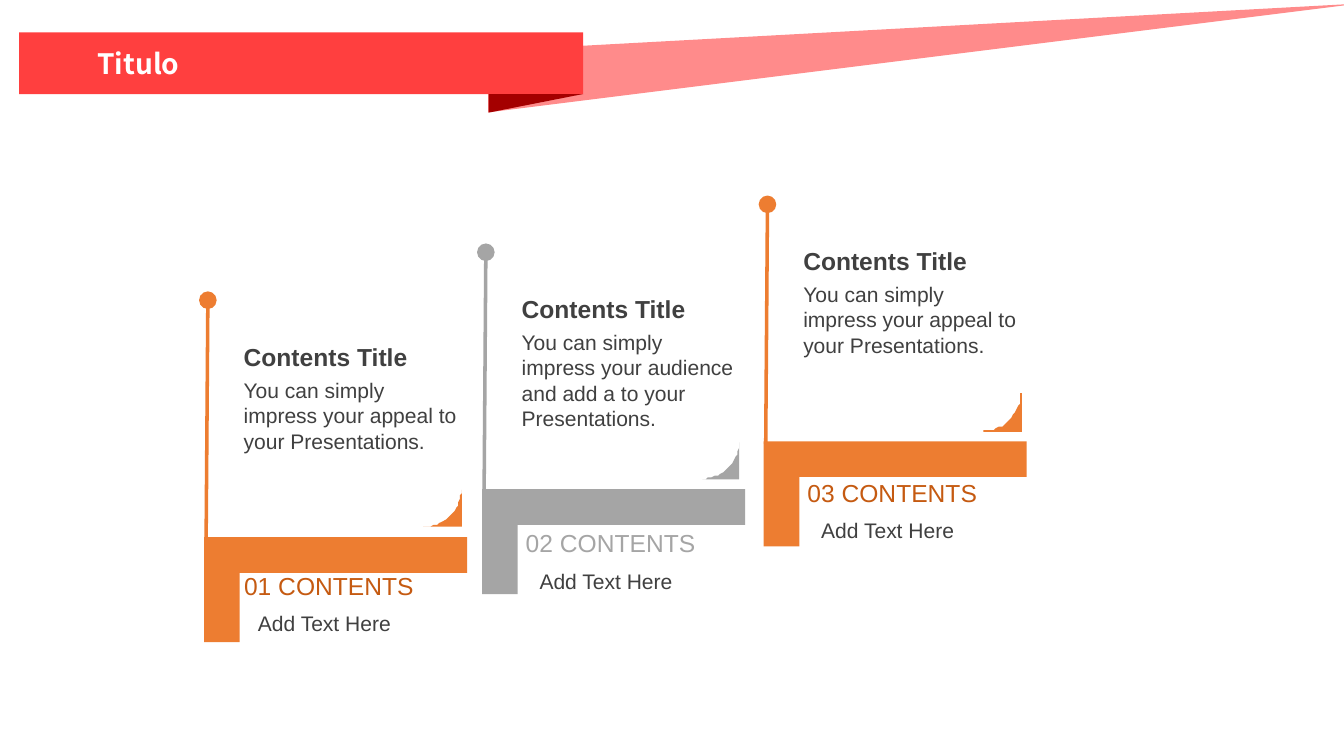
import math

import lxml.etree
import pptx
import pptx.dml.color
import pptx.enum.shapes
import pptx.enum.text
import pptx.oxml.ns
import pptx.util

Pt = pptx.util.Pt
SHAPE = pptx.enum.shapes.MSO_SHAPE
ANCHOR = pptx.enum.text.MSO_ANCHOR
qn = pptx.oxml.ns.qn

COLORS = {
    "red": "FF3F3F", "pink": "FF8B8B", "maroon": "A40000", "white": "FFFFFF",
    "orange": "ED7D31", "rust": "C55A11", "gray": "A5A5A5", "dark": "404040",
}
FORMATS = {
    "banner": {"size": Pt(16), "bold": True, "name": "Noto Sans CJK SC"},
    "heading": {"size": Pt(14), "bold": True, "name": "Arial"},
    "label": {"size": Pt(14), "name": "Arial"},
    "body": {"size": Pt(12), "name": "Arial"},
}


def rgb(color):
    return pptx.dml.color.RGBColor.from_string(COLORS[color])


def paint(sp, color):
    sp.fill.solid()
    sp.fill.fore_color.rgb = rgb(color)
    sp.line.fill.background()
    sp.shadow.inherit = False
    return sp


def add_preset(s, kind, box, color, flip=False):
    sp = paint(s.shapes.add_shape(kind, *map(Pt, box)), color)
    if flip:
        sp.element.spPr.find(qn("a:xfrm")).set("flipV", "1")
    return sp


def add_outline(s, points, color):
    fb = s.shapes.build_freeform(*points[0], scale=Pt(1))
    fb.add_line_segments(points[1:], close=True)
    return paint(fb.convert_to_shape(), color)


def add_text(s, box, text, style, color, anchor=ANCHOR.TOP, inset=(7.2, 3.6)):
    tf = s.shapes.add_textbox(*map(Pt, box)).text_frame
    tf.word_wrap = True
    tf.auto_size = pptx.enum.text.MSO_AUTO_SIZE.SHAPE_TO_FIT_TEXT
    tf.vertical_anchor = anchor
    tf.margin_left = tf.margin_right = Pt(inset[0])
    tf.margin_top = tf.margin_bottom = Pt(inset[1])
    r = tf.paragraphs[0].add_run()
    r.text = text
    for key, value in FORMATS[style].items():
        setattr(r.font, key, value)
    r.font.color.rgb = rgb(color)


def add_pin(s, x1, y1, x2, y2, color):
    pin = s.shapes.add_connector(
        pptx.enum.shapes.MSO_CONNECTOR.STRAIGHT, *map(Pt, (x1, y1, x2, y2)))
    pin.line.color.rgb = rgb(color)
    pin.line.width = Pt(2)
    sp_pr = pin.element.spPr
    lxml.etree.SubElement(sp_pr.find(qn("a:ln")), qn("a:tailEnd"),
                          type="oval", w="lg", len="lg")
    lxml.etree.SubElement(sp_pr, qn("a:effectLst"))


def add_banner(s, x, y, w, h, title):
    right, bottom = x + w, y + h
    fold_w, fold_h = 53.8, 10.6
    fold_x = right - fold_w
    # Ribbon tail, bar and fold
    add_outline(s, [(fold_x, y + 10.2), (774, 2.2), (fold_x, bottom + fold_h)], "pink")
    add_preset(s, SHAPE.RECTANGLE, (x, y, w, h), "red")
    add_preset(s, SHAPE.RIGHT_TRIANGLE, (fold_x, bottom, fold_w, fold_h), "maroon", flip=True)
    add_text(s, (x + 39.6, y + 5.1, 259, 24.6), title, "banner", "white", inset=(5, 2.9))


def add_step(s, x, y, w, h, step):
    color = step["color"]
    # Stair and pin
    stair = add_preset(s, SHAPE.CORNER, (x, y, w, h), color, flip=True)
    stair.adjustments[0], stair.adjustments[1] = 0.34, 0.34
    add_pin(s, x + 1.2, y + 1.4, x + 2.2, y - 135, color)
    # Curled corner above the tread
    size, radius = 21.6, 21.2
    cx, cy = x + 125.2, y - 27.2
    angles = [math.radians(a) for a in range(0, 91, 5)]
    arc = [(cx + radius * math.cos(a), cy + radius * math.sin(a)) for a in angles]
    add_outline(s, [(cx + size, cy)] + arc + [(cx, cy + size), (cx + size, cy + size)], color)
    # Text above the tread
    add_text(s, (x + 15.5, y - 114.6, 139, 24), "Contents Title", "heading", "dark")
    add_text(s, (x + 15.5, y - 94.5, 139, 77), step["body"], "body", "dark")
    # Text below the tread
    dx, dy = step["label_at"]
    add_text(s, (x + dx, y + dy, 154, 24.2), step["label"], "label",
             step["label_color"], anchor=ANCHOR.MIDDLE)
    add_text(s, (x + dx + 7.9, y + dy + 22.8, 128, 21), "Add Text Here", "body", "dark")


APPEAL = "You can simply impress your appeal to your Presentations."
AUDIENCE = "You can simply impress your audience and add a to your Presentations."
STEPS = [
    {"x": 116.2, "color": "orange", "label": "01 CONTENTS", "label_color": "rust",
     "label_at": (15.7, 15.4), "body": APPEAL},
    {"x": 274.5, "color": "gray", "label": "02 CONTENTS", "label_color": "gray",
     "label_at": (17.8, 18.6), "body": AUDIENCE},
    {"x": 434.9, "color": "orange", "label": "03 CONTENTS", "label_color": "rust",
     "label_at": (17.8, 17.3), "body": APPEAL},
]


def main():
    prs = pptx.Presentation()
    prs.slide_width, prs.slide_height = Pt(765.4), Pt(425.5)
    s = prs.slides.add_slide(prs.slide_layouts[6])
    add_banner(s, 10.9, 18.5, 321.2, 35.1, "Titulo")
    # Each step rises by the same amount
    for i, step in enumerate(STEPS):
        stair = add_step(s, step["x"], 306 - 27.3 * i, 149.8, 59.8, step)
    prs.save("out.pptx")


if __name__ == "__main__":
    main()
